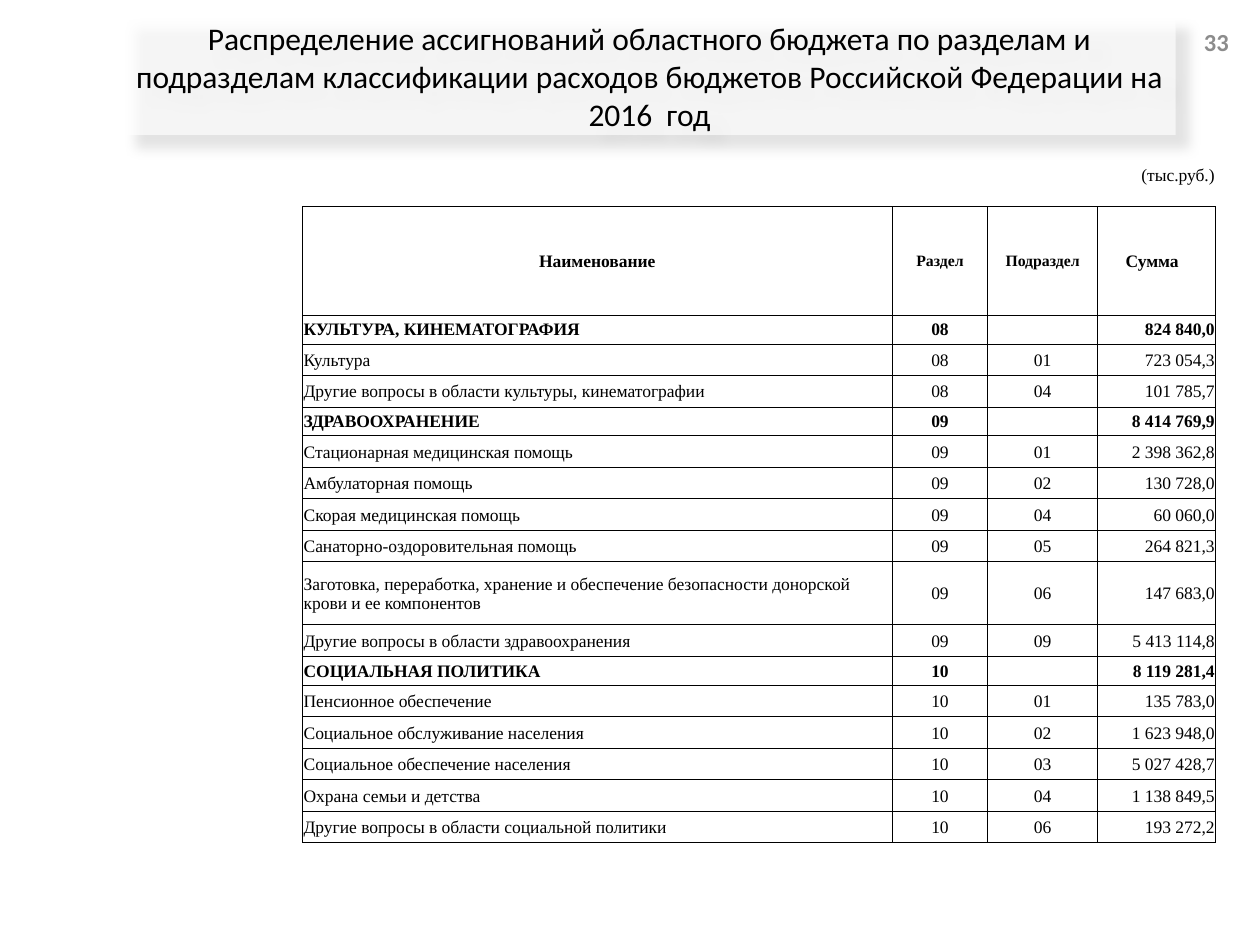
from lxml.etree import SubElement as Sub
from pptx import Presentation
from pptx.dml.color import RGBColor
from pptx.enum.text import MSO_ANCHOR as Anchor, PP_ALIGN as Align
from pptx.oxml.ns import qn
from pptx.util import Inches, Pt

TITLE = ("Распределение ассигнований областного бюджета по разделам и подразделам "
         "классификации расходов бюджетов Российской Федерации на 2016  год")
UNIT = "(тыс.руб.)"
HEADS = ["Наименование", "Раздел", "Подраздел", "Сумма"]

# Each section: name, code, total, then its lines (name, subsection, sum)
SECTIONS = [
    ("КУЛЬТУРА, КИНЕМАТОГРАФИЯ", "08", "824 840,0", [
        ("Культура", "01", "723 054,3"),
        ("Другие вопросы в области культуры, кинематографии", "04", "101 785,7"),
    ]),
    ("ЗДРАВООХРАНЕНИЕ", "09", "8 414 769,9", [
        ("Стационарная медицинская помощь", "01", "2 398 362,8"),
        ("Амбулаторная помощь", "02", "130 728,0"),
        ("Скорая медицинская помощь", "04", "60 060,0"),
        ("Санаторно-оздоровительная помощь", "05", "264 821,3"),
        ("Заготовка, переработка, хранение и обеспечение безопасности "
         "донорской крови и ее компонентов", "06", "147 683,0"),
        ("Другие вопросы в области здравоохранения", "09", "5 413 114,8"),
    ]),
    ("СОЦИАЛЬНАЯ ПОЛИТИКА", "10", "8 119 281,4", [
        ("Пенсионное обеспечение", "01", "135 783,0"),
        ("Социальное обслуживание населения", "02", "1 623 948,0"),
        ("Социальное обеспечение населения", "03", "5 027 428,7"),
        ("Охрана семьи и детства", "04", "1 138 849,5"),
        ("Другие вопросы в области социальной политики", "06", "193 272,2"),
    ]),
]
WIDTHS = [4.68, 0.76, 0.87, 0.94]
ALIGNS = [Align.LEFT, Align.CENTER, Align.CENTER, Align.RIGHT]


def color(code):
    return RGBColor.from_string(code)


def style(para, size, name, code="000000", bold=False, align=Align.LEFT):
    para.alignment = align
    font = para.font
    font.size, font.name, font.bold = Pt(size), name, bold
    font.color.rgb = color(code)


def tint(parent, code, alpha):
    clr = Sub(parent, qn("a:srgbClr"), val=code)
    Sub(clr, qn("a:alpha"), val=str(alpha * 1000))


def add_title(slide, left, top, width, height):
    box = slide.shapes.title
    box.left, box.top = Inches(left), Inches(top)
    box.width, box.height = Inches(width), Inches(height)
    # Translucent fill and soft shadow
    props = box.fill._xPr
    tint(Sub(props, qn("a:solidFill")), "FFFFFF", 65)
    shade = Sub(Sub(props, qn("a:effectLst")), qn("a:outerShdw"),
                blurRad=str(Pt(7)), dist=str(Pt(10)), dir=str(45 * 60000),
                algn="tl", rotWithShape="0")
    tint(shade, "000000", 16)
    # Heading text
    frame = box.text_frame
    frame.word_wrap = True
    frame.vertical_anchor = Anchor.MIDDLE
    frame.text = TITLE
    style(frame.paragraphs[0], 18, "Calibri", align=Align.CENTER)


def add_number(slide, left, top, width, height):
    box = slide.shapes.add_textbox(Inches(left), Inches(top), Inches(width), Inches(height))
    frame = box.text_frame
    frame.word_wrap = True
    frame.vertical_anchor = Anchor.MIDDLE
    frame.text = "33"
    style(frame.paragraphs[0], 14, "Calibri", "8C8C8C", True, Align.RIGHT)


def set_edges(cell, shown):
    props = cell._tc.get_or_add_tcPr()
    for side in "LRTB":
        line = Sub(props, qn("a:ln" + side), w=str(Pt(0.5)))
        if side in shown:
            Sub(Sub(line, qn("a:solidFill")), qn("a:srgbClr"), val="000000")
        else:
            Sub(line, qn("a:noFill"))


def fill_cell(cell, text, align, size=10, bold=False, edges="LRTB", anchor=Anchor.MIDDLE):
    set_edges(cell, edges)
    cell.fill.background()
    cell.margin_left = cell.margin_right = cell.margin_top = Inches(0.01)
    cell.margin_bottom = 0
    cell.vertical_anchor = anchor
    cell.text = text
    para = cell.text_frame.paragraphs[0]
    style(para, size, "Times New Roman", bold=bold, align=align)
    if not text:
        # Keeps a blank cell from stretching its row
        Sub(para._p, qn("a:endParaRPr"), sz=str(size * 100))


def list_rows():
    """Yield height, bold and the four texts of each body row."""
    for name, code, total, lines in SECTIONS:
        yield 0.23, True, (name, code, "", total)
        for label, sub, value in lines:
            height = 0.5 if len(label) > 60 else 0.25
            yield height, False, (label, code, sub, value)


def add_budget(slide, left, top, width, height):
    body = list(list_rows())
    table = slide.shapes.add_table(len(body) + 2, 4, Inches(left), Inches(top),
                                   Inches(width), Inches(height)).table
    table.first_row = table.horz_banding = False
    for col, size in zip(table.columns, WIDTHS):
        col.width = Inches(size)
    for row, size in zip(table.rows, [0.33, 0.86] + [item[0] for item in body]):
        row.height = Inches(size)
    # Unit line across the top
    for col in range(4):
        fill_cell(table.cell(0, col), UNIT if col == 0 else "", Align.RIGHT,
                  edges="B", anchor=Anchor.TOP)
    table.cell(0, 0).merge(table.cell(0, 3))
    # Column heads
    for col, (text, size) in enumerate(zip(HEADS, [10, 9, 9, 10])):
        fill_cell(table.cell(1, col), text, Align.CENTER, size, True)
    table.cell(1, 3).margin_right = Inches(0.08)
    # Sections and their lines
    for row, (_, bold, texts) in enumerate(body, 2):
        for col, (text, align) in enumerate(zip(texts, ALIGNS)):
            fill_cell(table.cell(row, col), text, align, bold=bold)


def main():
    deck = Presentation()
    deck.slide_width, deck.slide_height = Inches(10), Inches(7.5)
    slide = deck.slides.add_slide(deck.slide_layouts[5])
    add_title(slide, 0.98, 0.13, 8.35, 0.94)
    add_budget(slide, 2.4, 1.31, 7.25, 5.35)
    add_number(slide, 9.17, 0.13, 0.68, 0.4)
    deck.save("out.pptx")


if __name__ == "__main__":
    main()
